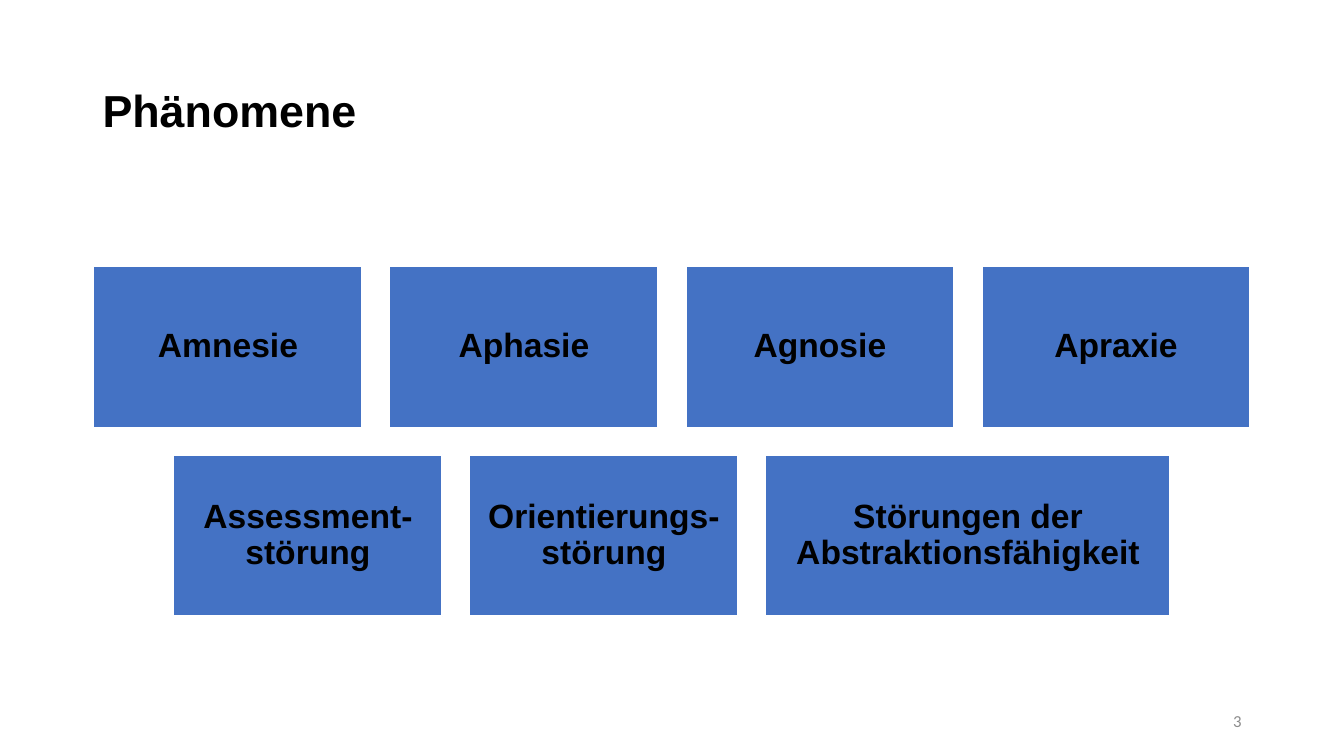
from pptx import Presentation
from pptx.dml.color import RGBColor
from pptx.enum import shapes, text
from pptx.util import Cm, Pt

# Content
TITLE = "Phänomene"
PAGE_NUMBER = "3"
NARROW, WIDE = 6.78, 10.21  # box widths in cm
ROWS = [
    [("Amnesie", NARROW), ("Aphasie", NARROW),
     ("Agnosie", NARROW), ("Apraxie", NARROW)],
    [("Assessment-störung", NARROW), ("Orientierungs-störung", NARROW),
     ("Störungen der Abstraktionsfähigkeit", WIDE)],
]

# Layout in cm
SLIDE_W, SLIDE_H = 33.87, 19.05
ROWS_TOP, BOX_H, GAP = 6.71, 4.07, 0.68

BLACK = RGBColor(0x00, 0x00, 0x00)
WHITE = RGBColor(0xFF, 0xFF, 0xFF)
BLUE = RGBColor(0x44, 0x72, 0xC4)
GREY = RGBColor(0x8C, 0x8C, 0x8C)


def write(sp, content, size, color, align, font="Arial", bold=True, spacing=0.9):
    tf = sp.text_frame
    tf.text = content
    tf.word_wrap = True
    tf.auto_size = text.MSO_AUTO_SIZE.NONE
    tf.vertical_anchor = text.MSO_ANCHOR.MIDDLE
    p = tf.paragraphs[0]
    p.alignment = align
    p.line_spacing = spacing
    f = p.runs[0].font
    f.name, f.size, f.bold = font, Pt(size), bold
    f.color.rgb = color


def add_box(s, label, left, top, width):
    sp = s.shapes.add_shape(shapes.MSO_SHAPE.RECTANGLE,
                            Cm(left), Cm(top), Cm(width), Cm(BOX_H))
    sp.shadow.inherit = False
    sp.fill.solid()
    sp.fill.fore_color.rgb = BLUE
    sp.line.color.rgb = WHITE
    sp.line.width = Pt(1.5)
    write(sp, label, 24, BLACK, text.PP_ALIGN.CENTER)
    tf = sp.text_frame
    tf.margin_left = tf.margin_right = tf.margin_top = tf.margin_bottom = Cm(0.25)


def main():
    prs = Presentation()
    prs.slide_width, prs.slide_height = Cm(SLIDE_W), Cm(SLIDE_H)
    s = prs.slides.add_slide(prs.slide_layouts[5])

    # Title
    title = s.shapes.title
    title.left, title.top = Cm(2.33), Cm(1.01)
    title.width, title.height = Cm(29.21), Cm(3.68)
    write(title, TITLE, 32, BLACK, text.PP_ALIGN.LEFT)

    # Rows of boxes, each centred on the slide
    for i, row in enumerate(ROWS):
        row_w = sum(width for _, width in row) + GAP * (len(row) - 1)
        left = (SLIDE_W - row_w) / 2
        top = ROWS_TOP + i * (BOX_H + GAP)
        for label, width in row:
            add_box(s, label, left, top, width)
            left += width + GAP

    # Page number
    number = s.shapes.add_textbox(Cm(23.92), Cm(17.66), Cm(7.62), Cm(1.01))
    write(number, PAGE_NUMBER, 12, GREY, text.PP_ALIGN.RIGHT,
          font="Calibri", bold=False, spacing=1.0)

    prs.save("out.pptx")


if __name__ == "__main__":
    main()
